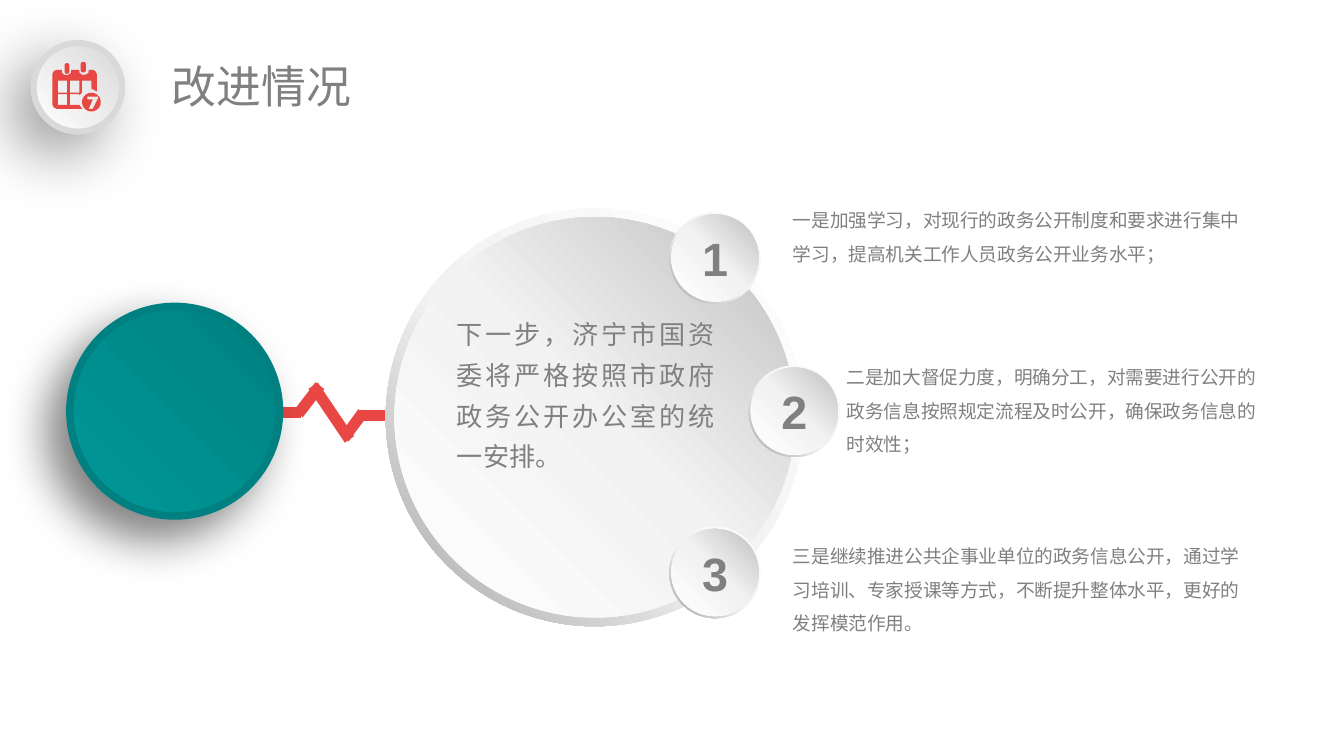
from math import cos, pi, sin

from lxml import etree
from pptx import Presentation
from pptx.dml.color import RGBColor
from pptx.enum.shapes import MSO_CONNECTOR, MSO_SHAPE
from pptx.enum.text import MSO_ANCHOR, MSO_AUTO_SIZE, PP_ALIGN
from pptx.oxml.ns import qn
from pptx.util import Inches, Pt

OVAL, DONUT = MSO_SHAPE.OVAL, MSO_SHAPE.DONUT
STRAIGHT = MSO_CONNECTOR.STRAIGHT
MIDDLE = MSO_ANCHOR.MIDDLE
FIT = MSO_AUTO_SIZE.SHAPE_TO_FIT_TEXT
LEFT, CENTER, JUSTIFY = PP_ALIGN.LEFT, PP_ALIGN.CENTER, PP_ALIGN.JUSTIFY

COLUMNS, ROWS = 100, 56.25
GRAY, RED = "808080", "E94744"
RIM = [(0, "FFFFFF"), (55, "F2F2F2"), (100, "A6A6A6")]
FACE = [(0, "FFFFFF"), (51, "F2F2F2"), (100, "BFBFBF")]
UP_RIGHT, DOWN_LEFT = 315, 135

TITLE = "改进情况"
PLAN = "下一步，济宁市国资委将严格按照市政府政务公开办公室的统一安排。"
MEASURES = [
    ((49.8, 15.8), (59, 14.7, 33.7, 5),
     "一是加强学习，对现行的政务公开制度和要求进行集中学习，提高机关工作人员政务公开业务水平；"),
    ((55.7, 27.2), (63, 26.4, 31.2, 7.6),
     "二是加大督促力度，明确分工，对需要进行公开的政务信息按照规定流程及时公开，确保政务信息的时效性；"),
    ((49.8, 39.2), (59, 39.7, 34.3, 7.6),
     "三是继续推进公共企事业单位的政务信息公开，通过学习培训、专家授课等方式，不断提升整体水平，更好的发挥模范作用。"),
]
PULSE = [
    ((17.5, 30.7), (22.4, 30.7)),
    ((26.8, 30.9), (30.9, 30.9)),
    ((22.2, 30.8), (23.8, 28.7)),
    ((25.6, 32.6), (27, 30.7)),
    ((26, 32.7), (23.3, 28.7)),
]
CALENDAR = [
    (4.2, 5.2), (4.6, 5.2), (4.6, 5.4), (4.75, 5.55), (5, 5.6), (5.2, 5.5),
    (5.3, 5.4), (5.3, 5.2), (5.9, 5.2), (5.9, 5.4), (6, 5.5), (6.2, 5.6),
    (6.5, 5.5), (6.6, 5.4), (6.6, 5.2), (6.9, 5.2), (7.1, 5.3), (7.2, 5.5),
    (7.2, 6.8), (6.8, 6.6), (6.8, 6), (6.1, 6), (6.1, 6.9), (5.9, 7.1),
    (5.9, 7), (5.2, 7), (5.2, 7.8), (5.9, 7.8), (6.1, 8.1), (4.2, 8.1),
    (4, 8), (3.9, 7.8), (3.9, 5.5), (4, 5.3),
]
SEVEN = [(6.5, 7.2), (7.3, 7.2), (7.3, 7.3), (6.9, 8.1), (6.6, 8.1), (6.9, 7.4), (6.5, 7.4)]
WINDOWS = [(4.3, 6, 0.9), (5.2, 6, 0.9), (4.3, 7, 0.8)]


def grid(*cells):
    return [Inches(cell / 10) for cell in cells]


def color(code):
    return RGBColor.from_string(code)


def fill_gradient(shape, stops, angle):
    shape.fill.gradient()
    shape.fill.gradient_angle = 360 - angle
    stop_list = shape.element.spPr.find(qn("a:gradFill")).find(qn("a:gsLst"))
    for stop in list(stop_list):
        stop_list.remove(stop)
    for share, code in stops:
        stop = etree.SubElement(stop_list, qn("a:gs"), pos=str(share * 1000))
        etree.SubElement(stop, qn("a:srgbClr"), val=code)


def add_disc(shapes, kind, place, stops, angle):
    disc = shapes.add_shape(kind, *grid(*place))
    disc.shadow.inherit = False
    fill_gradient(disc, stops, angle)
    disc.line.fill.background()
    return disc


def outline(disc, code, width):
    disc.line.color.rgb = color(code)
    disc.line.width = Pt(width)


def cast_shadow(shape, opacity, blur, distance):
    effects = shape.element.spPr.find(qn("a:effectLst"))
    shadow = etree.SubElement(
        effects, qn("a:outerShdw"), blurRad=str(Pt(blur)), dist=str(Pt(distance)),
        dir=str(DOWN_LEFT * 60000), algn="tr", rotWithShape="0")
    tint = etree.SubElement(shadow, qn("a:srgbClr"), val="000000")
    etree.SubElement(tint, qn("a:alpha"), val=str(opacity * 1000))


def write(frame, text, size, align=LEFT, spacing=None, bold=False):
    para = frame.paragraphs[0]
    para.alignment = align
    para.line_spacing = spacing
    span = para.add_run()
    span.text = text
    span.font.name = "Arial"
    span.font.size = Pt(size)
    span.font.bold = bold
    span.font.color.rgb = color(GRAY)


def add_text(page, place, text, size, inset=0, **style):
    frame = page.shapes.add_textbox(*grid(*place)).text_frame
    frame.word_wrap = True
    frame.auto_size = FIT
    frame.margin_left = frame.margin_right = Inches(inset)
    frame.margin_top = frame.margin_bottom = Inches(inset / 2)
    write(frame, text, size, **style)


def add_ball(page, left, top, size, rim):
    shapes = page.shapes.add_group_shape().shapes
    ring = add_disc(shapes, DONUT, (left, top, size, size), RIM, DOWN_LEFT)
    ring.adjustments[0] = 0.049
    inner = size - 2 * rim
    return add_disc(shapes, OVAL, (left + rim, top + rim, inner, inner), FACE, UP_RIGHT)


def add_pulse(page):
    shapes = page.shapes.add_group_shape().shapes
    for start, end in PULSE:
        line = shapes.add_connector(STRAIGHT, *grid(*start, *end))
        line.line.color.rgb = color(RED)
        line.line.width = Pt(6)
        etree.SubElement(line.element.spPr, qn("a:effectLst"))


def rounded(x, y, radius, stretch=0):
    turns = [2 * pi * (step + 0.5) / 24 for step in range(24)]
    return [(x + radius * cos(turn),
             y + radius * sin(turn) + (stretch if sin(turn) > 0 else -stretch))
            for turn in turns]


def window(left, top, height):
    right, bottom = left + 0.7, top + height
    return [(left, top), (right, top), (right, bottom), (left, bottom)]


def add_calendar(shapes):
    contours = [CALENDAR, rounded(6.2, 5, 0.2, 0.2), rounded(4.98, 5.1, 0.18, 0.22),
                rounded(6.8, 7.6, 0.7), SEVEN]
    contours += [window(*cell) for cell in WINDOWS]
    builder = shapes.build_freeform(*grid(*contours[0][0]))
    for contour in contours:
        points = [grid(*point) for point in contour]
        builder.move_to(*points[0])
        builder.add_line_segments(points[1:], close=True)
    icon = builder.convert_to_shape()
    icon.shadow.inherit = False
    icon.fill.solid()
    icon.fill.fore_color.rgb = color(RED)
    icon.line.fill.background()


def add_header(page):
    add_text(page, (11.8, 3.9, 25.8, 5), TITLE, 24, inset=0.1)
    shapes = page.shapes.add_group_shape().shapes
    badge = add_disc(shapes, OVAL, (2.5, 3.2, 6.6, 6.6),
                     [(0, "FFFFFF"), (100, "D9D9D9")], UP_RIGHT)
    outline(badge, "D9D9D9", 3.25)
    cast_shadow(badge, 40, 35, 15)
    add_calendar(shapes)


def add_measure(page, number, ball, place, text):
    face = add_ball(page, *ball, 6.8, 0.15)
    face.text_frame.vertical_anchor = MIDDLE
    write(face.text_frame, str(number), 25, align=CENTER, bold=True)
    add_text(page, place, text, 10, spacing=1.5)


def main():
    deck = Presentation()
    deck.slide_width, deck.slide_height = grid(COLUMNS, ROWS)
    page = deck.slides.add_slide(deck.slide_layouts[6])
    add_header(page)
    add_pulse(page)
    source = add_disc(page.shapes, OVAL, (5.2, 22.8, 15.6, 15.6),
                      [(0, "009999"), (100, "008080")], UP_RIGHT)
    outline(source, "008080", 4)
    cast_shadow(source, 50, 25, 15)
    add_ball(page, 28.7, 15.5, 31.1, 0.65)
    for number, measure in enumerate(MEASURES, 1):
        add_measure(page, number, *measure)
    add_text(page, (34, 23, 19.2, 12.2), PLAN, 14, align=JUSTIFY, spacing=1.3)
    deck.save("out.pptx")


if __name__ == "__main__":
    main()
